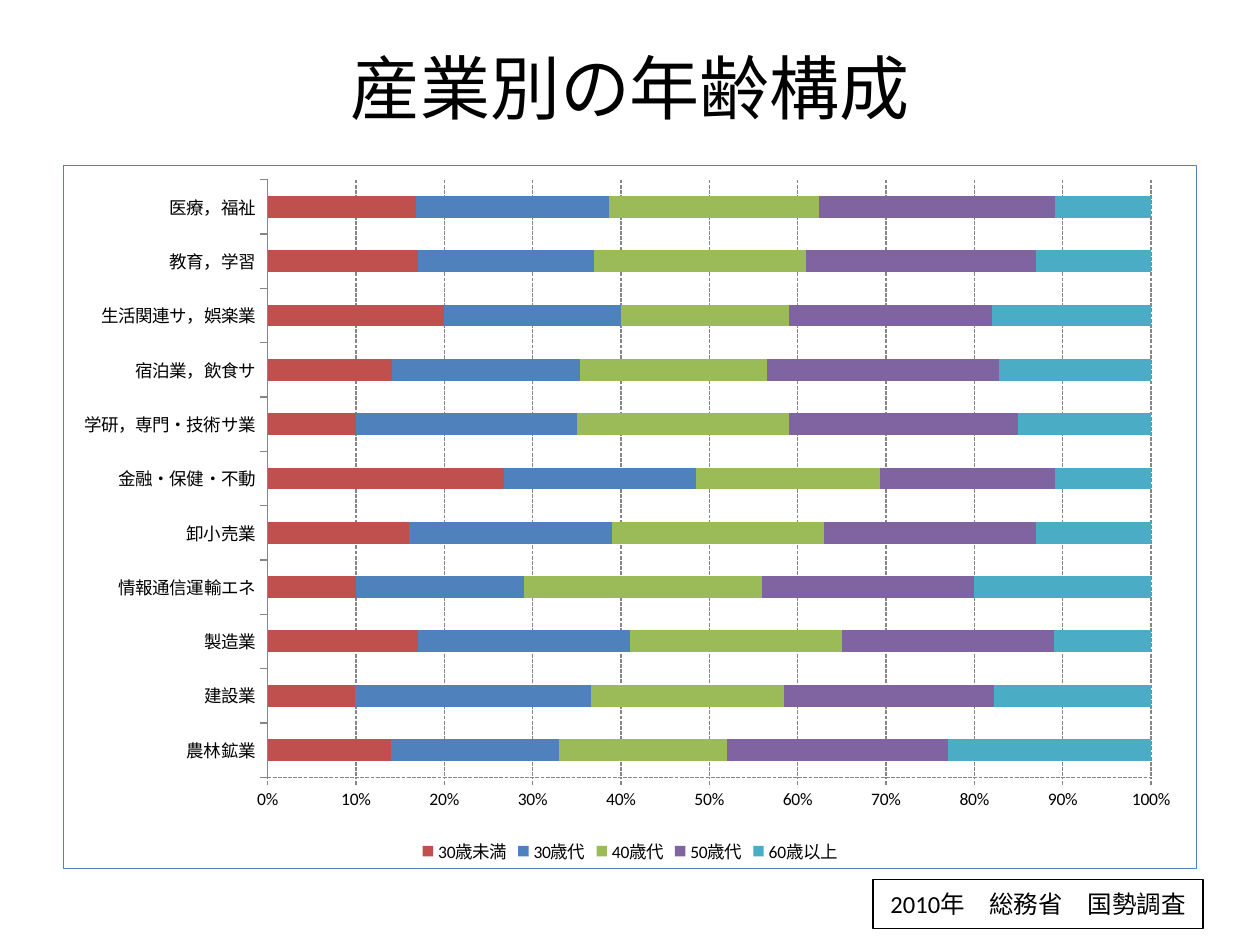
from dataclasses import dataclass

from lxml import etree
from pptx import Presentation
from pptx.chart.data import CategoryChartData
from pptx.dml.color import RGBColor
from pptx.enum.chart import XL_CHART_TYPE, XL_LEGEND_POSITION, XL_TICK_MARK
from pptx.enum.dml import MSO_LINE
from pptx.enum.shapes import MSO_SHAPE
from pptx.enum.text import MSO_ANCHOR, PP_ALIGN
from pptx.oxml import parse_xml
from pptx.util import Inches, Pt

BAR_STACKED_100 = XL_CHART_TYPE.BAR_STACKED_100
LEGEND_BOTTOM = XL_LEGEND_POSITION.BOTTOM
TICK_OUTSIDE = XL_TICK_MARK.OUTSIDE
DASH = MSO_LINE.SQUARE_DOT
RECTANGLE = MSO_SHAPE.RECTANGLE
MIDDLE, CENTER = MSO_ANCHOR.MIDDLE, PP_ALIGN.CENTER

SLIDE_WIDTH, SLIDE_HEIGHT = Inches(10), Inches(7.5)
FONT = "Calibri"
COLORS = {
    "text": "000000", "paper": "FFFFFF", "axis": "868686", "frame": "4F81BD",
    "red": "C0504D", "blue": "4F81BD", "green": "9BBB59",
    "purple": "8064A2", "teal": "4BACC6",
}
INDUSTRIES = [
    "農林鉱業", "建設業", "製造業", "情報通信運輸エネ", "卸小売業", "金融・保健・不動",
    "学研，専門・技術サ業", "宿泊業，飲食サ", "生活関連サ，娯楽業", "教育，学習", "医療，福祉",
]


@dataclass(frozen=True)
class Area:
    """A place on the slide, in inches."""
    left: float
    top: float
    width: float
    height: float

    def lengths(self) -> list:
        return [Inches(n) for n in (self.left, self.top, self.width, self.height)]


@dataclass(frozen=True)
class AgeGroup:
    name: str
    color: str
    shares: tuple


AGE_GROUPS = [
    AgeGroup("30歳未満", "red", (14, 10, 17, 10, 16, 27, 10, 14, 20, 17, 17)),
    AgeGroup("30歳代", "blue", (19, 27, 24, 19, 23, 22, 25, 21, 20, 20, 22)),
    AgeGroup("40歳代", "green", (19, 22, 24, 27, 24, 21, 24, 21, 19, 24, 24)),
    AgeGroup("50歳代", "purple", (25, 24, 24, 24, 24, 20, 26, 26, 23, 26, 27)),
    AgeGroup("60歳以上", "teal", (23, 18, 11, 20, 13, 11, 15, 17, 18, 13, 11)),
]
TITLE_AREA = Area(0.5, 0.3, 9, 0.77)
CHART_AREA = Area(0.5, 1.31, 9, 5.59)
SOURCE_AREA = Area(6.93, 6.98, 2.62, 0.39)
PLOT_SHARES = {"x": 0.18, "y": 0.02, "w": 0.78, "h": 0.85}

CHART_NS = "http://schemas.openxmlformats.org/drawingml/2006/chart"
DRAWING_NS = "http://schemas.openxmlformats.org/drawingml/2006/main"


def color(name: str) -> RGBColor:
    return RGBColor.from_string(COLORS[name])


def style_font(font, size: float) -> None:
    font.name = FONT
    font.size = Pt(size)
    font.color.rgb = color("text")


def write(shape, text: str, size: float) -> None:
    frame = shape.text_frame
    frame.word_wrap = True
    frame.vertical_anchor = MIDDLE
    para = frame.paragraphs[0]
    para.alignment = CENTER
    span = para.add_run()
    span.text = text
    style_font(span.font, size)


def style_line(line, name: str, width: float, dash=None) -> None:
    line.color.rgb = color(name)
    line.width = Pt(width)
    if dash is not None:
        line.dash_style = dash


def add_frame(chart) -> None:
    """Outline the whole chart area."""
    chart_part = chart._chartSpace.find(f"{{{CHART_NS}}}chart")
    chart_part.addnext(parse_xml(
        f'<c:spPr xmlns:c="{CHART_NS}" xmlns:a="{DRAWING_NS}"><a:noFill/>'
        f'<a:ln w="{Pt(0.75)}"><a:solidFill><a:srgbClr val="{COLORS["frame"]}"/>'
        "</a:solidFill></a:ln></c:spPr>"))


def place_plot(chart) -> None:
    """Fix the inner plot area as shares of the chart."""
    plot_area = chart._chartSpace.chart.plotArea
    for layout in plot_area.findall(f"{{{CHART_NS}}}layout"):
        plot_area.remove(layout)
    layout = parse_xml(f'<c:layout xmlns:c="{CHART_NS}"><c:manualLayout/></c:layout>')
    settings = {"layoutTarget": "inner", "xMode": "edge", "yMode": "edge", **PLOT_SHARES}
    for tag, value in settings.items():
        etree.SubElement(layout[0], f"{{{CHART_NS}}}{tag}").set("val", str(value))
    plot_area.insert(0, layout)


def add_age_chart(page) -> None:
    data = CategoryChartData()
    data.categories = INDUSTRIES
    for group in AGE_GROUPS:
        data.add_series(group.name, group.shares)
    chart = page.shapes.add_chart(BAR_STACKED_100, *CHART_AREA.lengths(), data).chart
    chart.has_title = False
    style_font(chart.font, 10)

    # Bars
    plot = chart.plots[0]
    plot.gap_width, plot.overlap = 150, 100
    plot.vary_by_categories = False
    for series, group in zip(plot.series, AGE_GROUPS):
        series.format.fill.solid()
        series.format.fill.fore_color.rgb = color(group.color)

    # Axes and gridlines
    industries, shares = chart.category_axis, chart.value_axis
    for axis in (industries, shares):
        axis.major_tick_mark = TICK_OUTSIDE
        style_font(axis.tick_labels.font, 10)
    style_line(industries.format.line, "axis", 0.75)
    style_line(shares.format.line, "axis", 0.75, DASH)
    shares.minimum_scale, shares.maximum_scale, shares.major_unit = 0, 1, 0.1
    shares.tick_labels.number_format = "0%"
    shares.tick_labels.number_format_is_linked = False
    shares.has_major_gridlines = True
    style_line(shares.major_gridlines.format.line, "axis", 0.75, DASH)

    # Legend and frame
    chart.has_legend = True
    chart.legend.position = LEGEND_BOTTOM
    chart.legend.include_in_layout = False
    style_font(chart.legend.font, 10)
    place_plot(chart)
    add_frame(chart)


def add_source_box(page) -> None:
    box = page.shapes.add_shape(RECTANGLE, *SOURCE_AREA.lengths())
    box.shadow.inherit = False
    box.fill.solid()
    box.fill.fore_color.rgb = color("paper")
    style_line(box.line, "text", 1)
    write(box, "2010年　総務省　国勢調査", 14)
    box.text_frame.word_wrap = False


def main() -> None:
    deck = Presentation()
    deck.slide_width, deck.slide_height = SLIDE_WIDTH, SLIDE_HEIGHT
    page = deck.slides.add_slide(deck.slide_layouts.get_by_name("Title Only"))

    # Title
    title = page.shapes.title
    title.left, title.top, title.width, title.height = TITLE_AREA.lengths()
    write(title, "産業別の年齢構成", 40)

    add_age_chart(page)
    add_source_box(page)
    deck.save("out.pptx")


if __name__ == "__main__":
    main()
